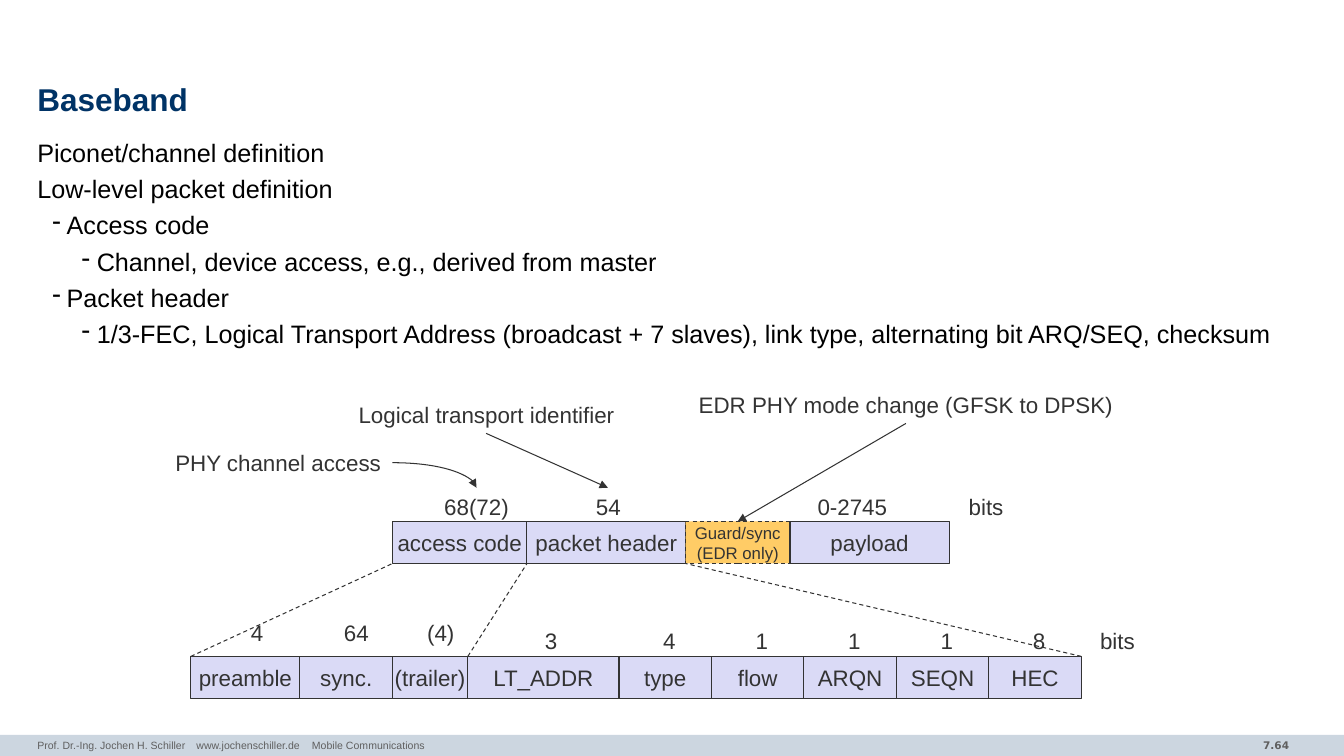
from pptx import Presentation
from pptx.dml.color import RGBColor
from pptx.enum.dml import MSO_LINE as Dash
from pptx.enum.shapes import MSO_CONNECTOR as Link, MSO_SHAPE as Shape
from pptx.enum.text import MSO_ANCHOR as Anchor, MSO_AUTO_SIZE as Fit, PP_ALIGN as Align
from pptx.oxml.ns import qn
from pptx.util import Cm, Pt
from lxml.etree import SubElement

INK, LILAC, AMBER, GREY = "333333", "DADAF6", "FFCC66", "5F5F5F"
BOX_H = 1.06
PACKET_Y, FIELD_Y = 13.14, 16.54
PACKET = [("access code", 3.39), ("packet header", 4), ("Guard/sync\n(EDR only)", 2.63),
          ("payload", 4.01)]
FIELDS = [("preamble", 2.75), ("sync.", 2.33), ("(trailer)", 1.9), ("LT_ADDR", 3.81),
          ("type", 2.33), ("flow", 2.33), ("ARQN", 2.33), ("SEQN", 2.33), ("HEC", 2.33)]
# top, then text, centre and width of each label
LABELS = {
    12.29: [("68(72)", 12.01, 2.13), ("54", 15.33, 1.14), ("0-2745", 21.48, 2.26),
            ("bits", 24.85, 1.4)],
    15.67: [("3", 13.89, 0.81)]
           + [(bits, 16.87 + 2.33 * i, 0.81) for i, bits in enumerate("41118")]
           + [("bits", 28.16, 1.4)],
    15.47: [("4", 6.48, 0.81), ("64", 8.98, 1.14), ("(4)", 11.11, 1.19)],
    11.2: [("PHY channel access", 7.01, 5.74)],
    9.98: [("Logical transport identifier", 12.26, 7.04)],
    9.73: [("EDR PHY mode change (GFSK to DPSK)", 22.83, 11.07)],
}
BODY = [(0, "Piconet/channel definition"),
        (0, "Low-level packet definition"),
        (1, "Access code"),
        (2, "Channel, device access, e.g., derived from master"),
        (1, "Packet header"),
        (2, "1/3-FEC, Logical Transport Address (broadcast + 7 slaves), "
            "link type, alternating bit ARQ/SEQ, checksum")]
INDENT = {1: (0.74, -0.36), 2: (1.5, -0.38)}


def rgb(code):
    return RGBColor.from_string(code)


def write(frame, text, size=16, color=INK, bold=False, font="Arial", align=Align.LEFT,
          anchor=Anchor.TOP, wrap=False, pad=(0.25, 0.13), spacing=None):
    frame.word_wrap, frame.auto_size = wrap, Fit.NONE
    frame.vertical_anchor = anchor
    frame.margin_left = frame.margin_right = Cm(pad[0])
    frame.margin_top = frame.margin_bottom = Cm(pad[1])
    for i, line in enumerate(text.split("\n")):
        para = frame.add_paragraph() if i else frame.paragraphs[0]
        run = para.add_run()
        run.text = line
        para.alignment = align
        if spacing:
            para.line_spacing = spacing
        face = run.font
        face.name, face.size, face.bold = font, Pt(size), bold
        face.color.rgb = rgb(color)


def add_text(slide, text, x, y, w, h, **style):
    box = slide.shapes.add_textbox(Cm(x), Cm(y), Cm(w), Cm(h))
    write(box.text_frame, text, **style)
    return box.text_frame


def add_rect(slide, x, y, w, h, fill):
    box = slide.shapes.add_shape(Shape.RECTANGLE, Cm(x), Cm(y), Cm(w), Cm(h))
    box.shadow.inherit = False
    box.fill.solid()
    box.fill.fore_color.rgb = rgb(fill)
    box.line.fill.background()
    return box


def add_line(slide, x1, y1, x2, y2, arrow=False, curve=False):
    kind = Link.CURVE if curve else Link.STRAIGHT
    link = slide.shapes.add_connector(kind, Cm(x1), Cm(y1), Cm(x2), Cm(y2))
    link.line.color.rgb, link.line.width = rgb(INK), Pt(0.75)
    props = link._element.spPr
    if curve:
        props.find(qn("a:prstGeom")).set("prst", "curvedConnector2")
    if arrow:
        SubElement(link.line._get_or_add_ln(), qn("a:tailEnd"), type="triangle")
    else:
        link.line.dash_style = Dash.DASH
    SubElement(props, qn("a:effectLst"))


def add_row(slide, x, y, cells):
    """Draw adjoining boxes; the amber one is the optional guard field."""
    for text, width in cells:
        guard = "\n" in text
        box = add_rect(slide, x, y, width, BOX_H, AMBER if guard else LILAC)
        box.line.color.rgb, box.line.width = rgb(INK), Pt(0.75)
        if guard:
            box.line.dash_style = Dash.DASH
        write(box.text_frame, text, size=12 if guard else 16,
              align=Align.CENTER, anchor=Anchor.MIDDLE)
        x += width


def add_body(slide):
    text = "\n".join(line for _, line in BODY)
    frame = add_text(slide, text, 0.94, 3.45, 32, 14.58, size=18, color="000000",
                     wrap=True, pad=(0, 0), spacing=1.02)
    for i, (para, (level, _)) in enumerate(zip(frame.paragraphs, BODY)):
        if i:
            para.space_before = Pt(3.8)
        if level:
            para.level = level
            props = para._p.get_or_add_pPr()
            left, hang = INDENT[level]
            props.set("marL", str(Cm(left)))
            props.set("indent", str(Cm(hang)))
            SubElement(props, qn("a:buChar"), char="-")


def add_footer(slide):
    add_rect(slide, 0, 18.52, 33.87, 0.53, "CCD6E0")
    add_text(slide, "7.64", 28.19, 18.49, 4.55, 0.58, size=7.5, color=GREY, bold=True,
             font="DejaVu Sans", align=Align.RIGHT)
    frame = add_text(slide, "Prof. Dr.-Ing. Jochen H. Schiller\twww.jochenschiller.de"
                     "\tMobile Communications", 0.94, 18.49, 22.15, 0.56, size=7.5,
                     color=GREY, wrap=True, pad=(0, 0.13))
    tabs = SubElement(frame.paragraphs[0]._p.get_or_add_pPr(), qn("a:tabLst"))
    for stop in (4.01, 6.92):
        SubElement(tabs, qn("a:tab"), pos=str(Cm(stop)), algn="l")


def main():
    deck = Presentation()
    deck.slide_width, deck.slide_height = Cm(33.87), Cm(19.05)
    slide = deck.slides.add_slide(deck.slide_layouts[5])
    add_footer(slide)

    title = slide.shapes.title
    title.left, title.top, title.width, title.height = Cm(0.94), Cm(1.98), Cm(32), Cm(1.19)
    write(title.text_frame, "Baseband", size=22.5, color="003366", bold=True,
          anchor=Anchor.MIDDLE, wrap=True, pad=(0, 0), spacing=0.85)
    add_body(slide)

    add_row(slide, 9.89, PACKET_Y, PACKET)
    add_row(slide, 4.81, FIELD_Y, FIELDS)
    for x1, x2 in ((9.89, 4.81), (13.28, 11.79), (17.28, 27.25)):
        add_line(slide, x2, FIELD_Y, x1, PACKET_Y + BOX_H)
    for top, row in LABELS.items():
        for text, centre, width in row:
            add_text(slide, text, centre - width / 2, top, width, 0.94, align=Align.CENTER)

    add_line(slide, 9.89, 11.66, 12.01, 12.29, arrow=True, curve=True)
    add_line(slide, 12.25, 10.92, 15.32, 12.29, arrow=True)
    add_line(slide, 22.83, 10.67, 18.59, PACKET_Y, arrow=True)
    deck.save("out.pptx")


if __name__ == "__main__":
    main()
